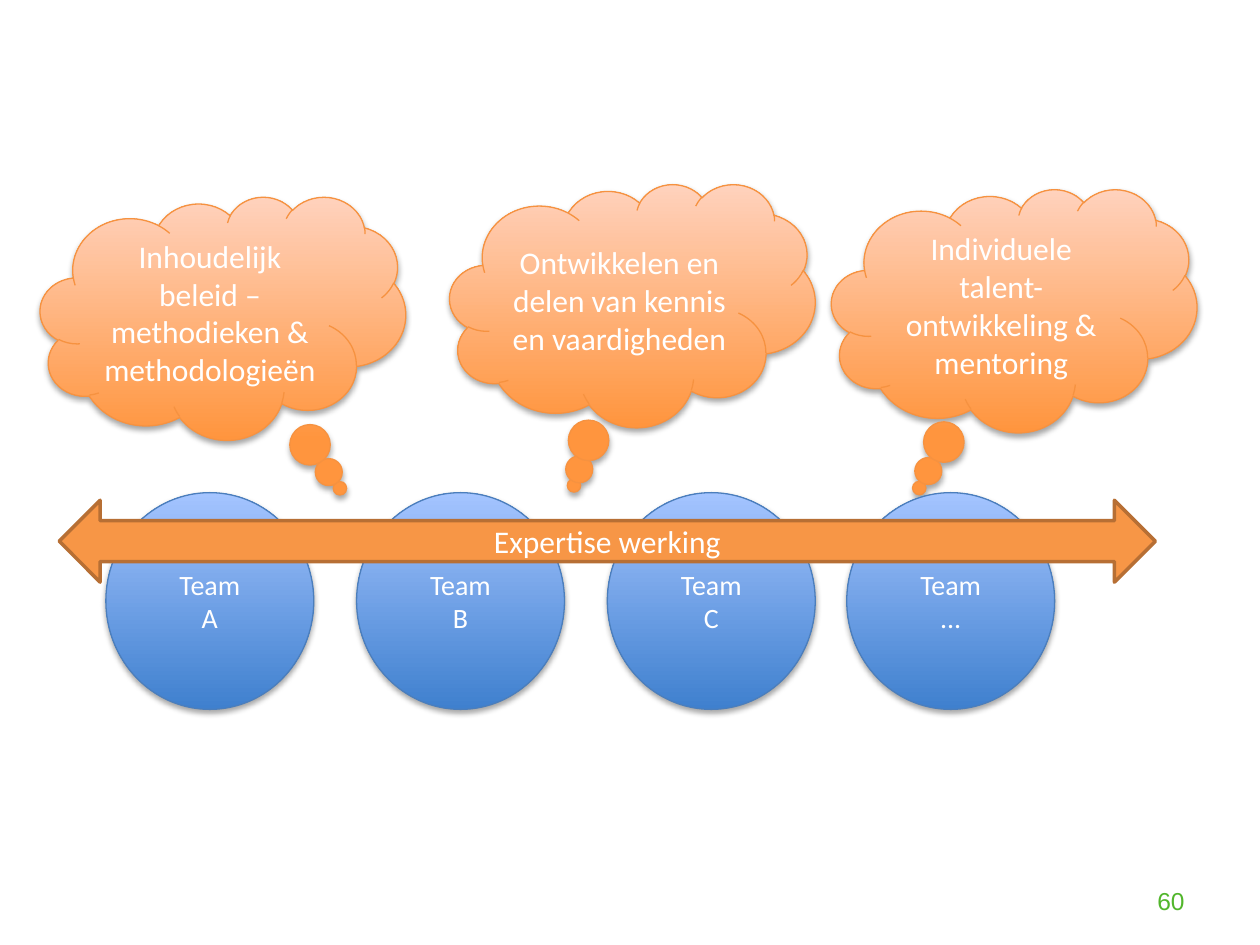
import pptx
import pptx.util
import pptx.oxml
import pptx.oxml.ns
from pptx.dml.color import RGBColor
from pptx.enum.shapes import MSO_SHAPE
from pptx.enum.text import MSO_ANCHOR, PP_ALIGN

WHITE = RGBColor(0xFF, 0xFF, 0xFF)
GREEN = RGBColor(0x52, 0xB6, 0x2C)
ORANGE = RGBColor(0xF7, 0x96, 0x46)
RUST = RGBColor(0xB7, 0x6F, 0x34)
WARM = (RGBColor(0xFF, 0x95, 0x3E), RGBColor(0xFF, 0xD2, 0xBD), RGBColor(0xF6, 0x92, 0x40))
COOL = (RGBColor(0x3F, 0x80, 0xCE), RGBColor(0xA4, 0xC4, 0xFF), RGBColor(0x4B, 0x7E, 0xBC))

CLOUDS = [
    ("Inhoudelijk beleid – methodieken & methodologieën", 0.32, 1.56, (0.32, 0.7)),
    ("Ontwikkelen en delen van kennis en vaardigheden", 3.57, 1.46, (-0.16, 0.74)),
    ("Individuele talent- ontwikkeling & mentoring", 6.6, 1.5, (-0.26, 0.73)),
]
TEAMS = [("A", 0.84), ("B", 2.83), ("C", 4.82), ("...", 6.72)]
CLOUD = (2.9, 1.93)
DISC = (1.65, 1.72)
ROW = 3.91
ARROW = (0.47, 3.97, 8.7, 0.65)
NUMBER = (7.17, 6.95, 2.33, 0.4)
SHADE = (
    '<a:outerShdw %s blurRad="40000" dist="23000" dir="5400000" rotWithShape="0">'
    '<a:srgbClr val="000000"><a:alpha val="35000"/></a:srgbClr></a:outerShdw>'
    % pptx.oxml.ns.nsdecls("a")
)


def write(shape, text, size, color=WHITE, font="Calibri", align=PP_ALIGN.CENTER):
    frame = shape.text_frame
    frame.word_wrap = True
    frame.vertical_anchor = MSO_ANCHOR.MIDDLE
    frame.text = text
    for para in frame.paragraphs:
        para.alignment = align
        for run in para.runs:
            run.font.size = pptx.util.Pt(size)
            run.font.name = font
            run.font.color.rgb = color


def add(slide, kind, box, text, size):
    shape = slide.shapes.add_shape(kind, *map(pptx.util.Inches, box))
    shape.shadow.inherit = False
    write(shape, text, size)
    return shape


def shade(shape, tones):
    low, high, edge = tones
    shape.fill.gradient()
    shape.fill.gradient_angle = 90
    for stop, tone in zip(shape.fill.gradient_stops, (low, high)):
        stop.color.rgb = tone
    shape.line.color.rgb = edge
    shape.line.width = pptx.util.Pt(0.75)
    effects = shape.element.spPr.find(pptx.oxml.ns.qn("a:effectLst"))
    effects.append(pptx.oxml.parse_xml(SHADE))


def main():
    deck = pptx.Presentation()
    deck.slide_width = pptx.util.Inches(10)
    deck.slide_height = pptx.util.Inches(7.5)
    slide = deck.slides.add_slide(deck.slide_layouts[6])

    number = slide.shapes.add_textbox(*map(pptx.util.Inches, NUMBER))
    write(number, "60", 14, GREEN, "Arial", PP_ALIGN.RIGHT)

    for text, left, top, tail in CLOUDS:
        cloud = add(slide, MSO_SHAPE.CLOUD_CALLOUT, (left, top, *CLOUD), text, 18)
        cloud.adjustments[0], cloud.adjustments[1] = tail
        shade(cloud, WARM)

    for name, left in TEAMS:
        disc = add(slide, MSO_SHAPE.OVAL, (left, ROW, *DISC), "Team\n" + name, 16)
        shade(disc, COOL)

    arrow = add(slide, MSO_SHAPE.LEFT_RIGHT_ARROW, ARROW, "Expertise werking", 18)
    arrow.fill.solid()
    arrow.fill.fore_color.rgb = ORANGE
    arrow.line.color.rgb = RUST
    arrow.line.width = pptx.util.Pt(2)

    deck.save("out.pptx")


if __name__ == "__main__":
    main()
